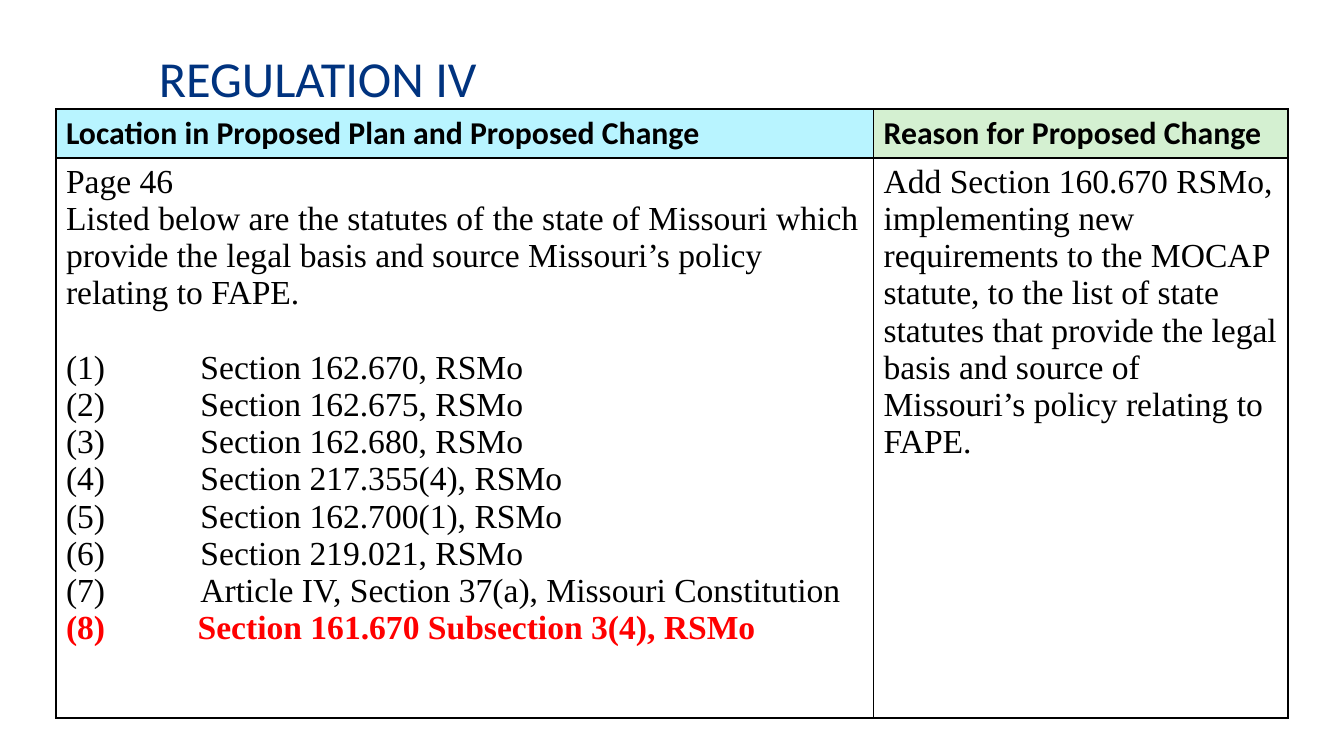
from pptx import Presentation
from pptx.dml.color import RGBColor
from pptx.enum.text import MSO_ANCHOR
from pptx.oxml import parse_xml
from pptx.oxml.ns import nsdecls
from pptx.util import Pt

NAVY = RGBColor(0x00, 0x33, 0x7F)
BLACK = RGBColor(0x00, 0x00, 0x00)
RED = RGBColor(0xFF, 0x00, 0x00)
CYAN = RGBColor(0xB8, 0xF4, 0xFF)
GREEN = RGBColor(0xD4, 0xF0, 0xD1)

SANS = "Calibri"
SERIF = "Times New Roman"


def write(frame, text, font=SERIF, size=18, color=BLACK, bold=False, hang=0, before=0):
    first = frame.paragraphs[0]
    para = frame.add_paragraph() if first.runs else first
    para.space_before = Pt(before)
    if hang:
        props = para._p.get_or_add_pPr()
        props.set("marL", str(Pt(hang)))
        props.set("indent", str(-Pt(hang)))
    run = para.add_run()
    run.text = text
    run.font.name = font
    run.font.size = Pt(size)
    run.font.bold = bold
    run.font.color.rgb = color


class Deck:
    """Holds the style and the current slide."""

    def __init__(self, wide, high):
        self.file = Presentation()
        self.file.slide_width, self.file.slide_height = Pt(wide), Pt(high)
        self.slide = self.file.slides.add_slide(self.file.slide_layouts[6])
        self.line = 1

    def title(self, text, x, y, w, h):
        box = self.slide.shapes.add_textbox(Pt(x), Pt(y), Pt(w), Pt(h))
        frame = box.text_frame
        frame.word_wrap = True
        frame.vertical_anchor = MSO_ANCHOR.MIDDLE
        write(frame, text, font=SANS, size=27, color=NAVY)

    def table(self, x, y, cols, rows):
        shape = self.slide.shapes.add_table(
            len(rows), len(cols), Pt(x), Pt(y), Pt(sum(cols)), Pt(sum(rows)))
        grid = shape.table
        grid.first_row = grid.horz_banding = False
        for col, width in zip(grid.columns, cols):
            col.width = Pt(width)
        for row, height in zip(grid.rows, rows):
            row.height = Pt(height)
        return grid

    def cell(self, cell, fill=None):
        cell.margin_left = cell.margin_right = Pt(5.4)
        cell.margin_top = cell.margin_bottom = Pt(2.7)
        props = cell._tc.get_or_add_tcPr()
        for side in "LRTB":
            props.append(parse_xml(
                f'<a:ln{side} {nsdecls("a")} w="{Pt(self.line)}"><a:solidFill>'
                f'<a:srgbClr val="{BLACK}"/></a:solidFill></a:ln{side}>'))
        if fill is None:
            cell.fill.background()
        else:
            cell.fill.solid()
            cell.fill.fore_color.rgb = fill
        return cell.text_frame


def main():
    deck = Deck(720, 405)
    deck.title("REGULATION IV", 78, 16, 642, 51)
    grid = deck.table(30, 58.5, (438, 222), (26.25, 300))

    heads = (("Location in Proposed Plan and Proposed Change", CYAN),
             ("Reason for Proposed Change", GREEN))
    for col, (text, fill) in enumerate(heads):
        write(deck.cell(grid.cell(0, col), fill), text, font=SANS, size=17, bold=True)

    plan = deck.cell(grid.cell(1, 0))
    write(plan, "Page 46")
    write(plan, "Listed below are the statutes of the state of Missouri which provide "
                "the legal basis and source Missouri’s policy relating to FAPE.")
    laws = ("Section 162.670, RSMo", "Section 162.675, RSMo", "Section 162.680, RSMo",
            "Section 217.355(4), RSMo", "Section 162.700(1), RSMo",
            "Section 219.021, RSMo", "Article IV, Section 37(a), Missouri Constitution")
    for num, law in enumerate(laws, 1):
        write(plan, f"({num})\t{law}", hang=72, before=20 if num == 1 else 0)
    write(plan, "(8)\tSection 161.670 Subsection 3(4), RSMo",
          color=RED, bold=True, hang=70.5)

    write(deck.cell(grid.cell(1, 1)),
          "Add Section 160.670 RSMo, implementing new requirements to the MOCAP "
          "statute, to the list of state statutes that provide the legal basis and "
          "source of Missouri’s policy relating to FAPE.")
    deck.file.save("out.pptx")


if __name__ == "__main__":
    main()
